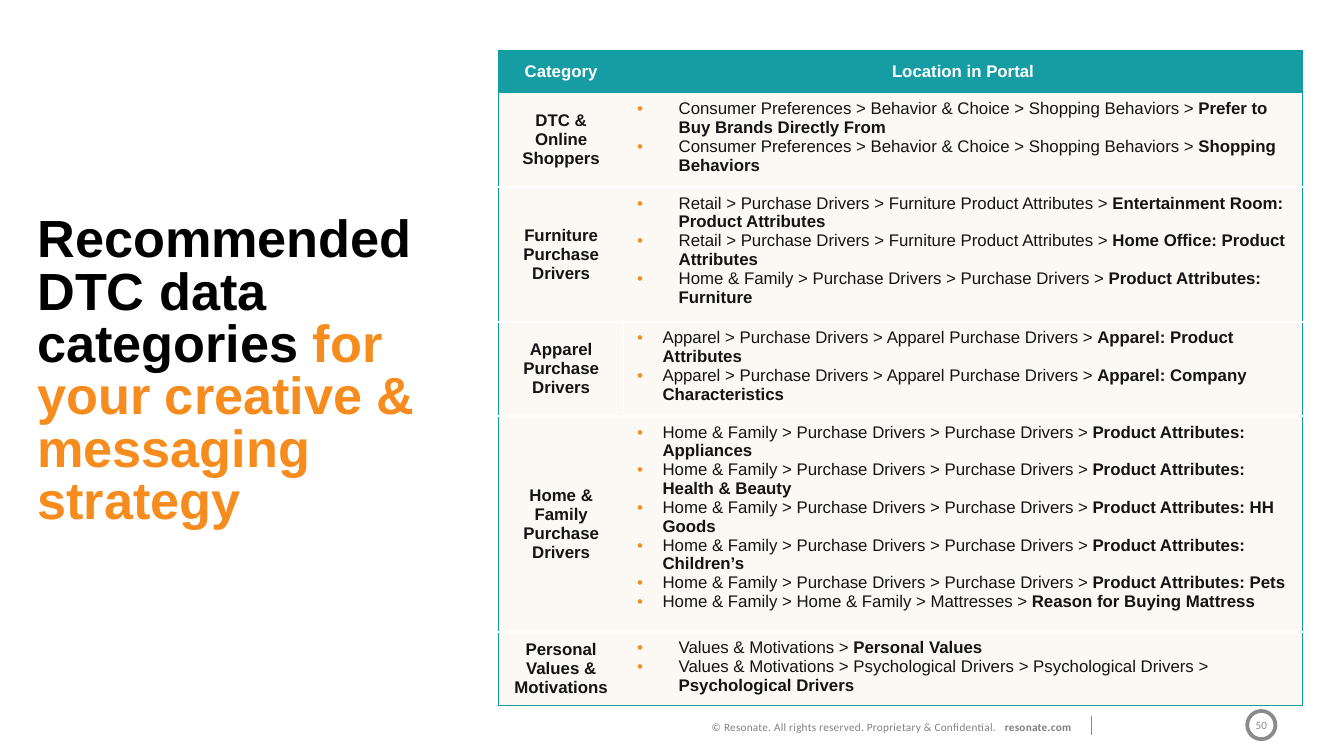
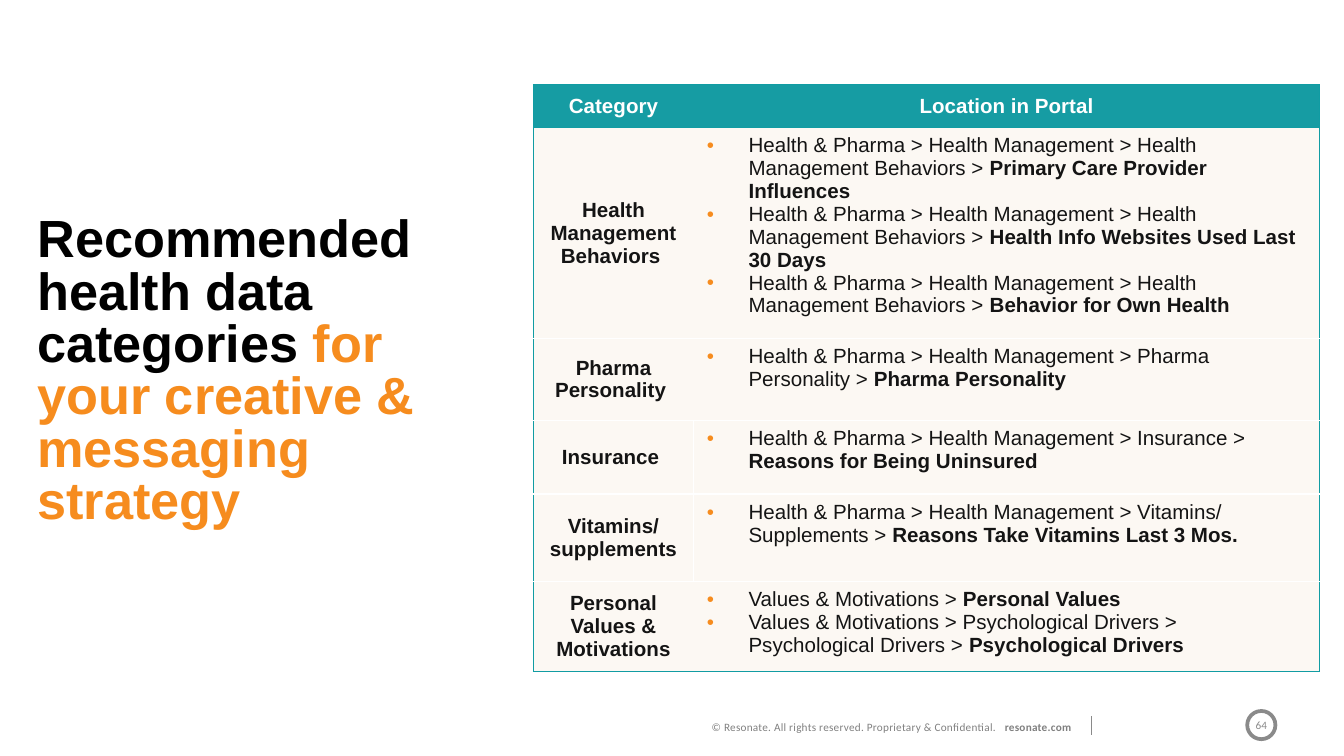
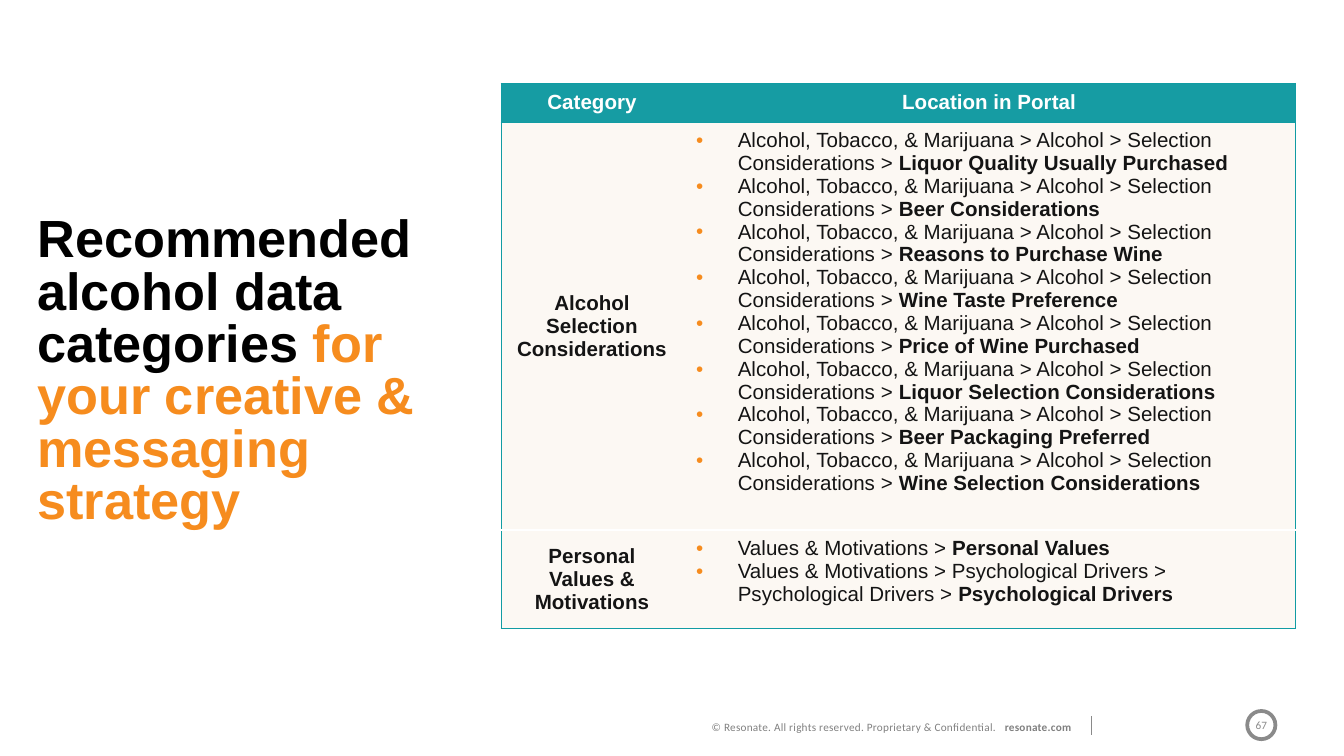
from lxml import etree
from pptx import Presentation
from pptx.dml.color import RGBColor
from pptx.enum.shapes import MSO_CONNECTOR, MSO_SHAPE
from pptx.enum.text import MSO_ANCHOR, PP_ALIGN
from pptx.oxml.ns import qn
from pptx.util import Inches, Pt

CENTER, RIGHT = PP_ALIGN.CENTER, PP_ALIGN.RIGHT
MIDDLE = MSO_ANCHOR.MIDDLE
OVAL, STRAIGHT = MSO_SHAPE.OVAL, MSO_CONNECTOR.STRAIGHT

SLIDE_WIDTH = Inches(10)
SLIDE_HEIGHT = SLIDE_WIDTH * 9 // 16

WHITE, BLACK, INK, CREAM = "FFFFFF", "000000", "141414", "FCF8F3"
TEAL, HEADER_TEAL, ORANGE, RED = "119CA3", "169CA3", "F68C1E", "F84524"
GRAY, FOOTER_GRAY = "8A8A8A", "808080"
OUTER, INNER = (TEAL, 0.75), (WHITE, 1)
NO_STYLE = "{2D5ABB26-0587-4C30-8999-92F81FD0307C}"
WIDE_INDENT, NARROW_INDENT = 0.31, 0.19

HEADINGS = ("Category", "Location in Portal")
TITLE_ENDING = [("for your ", 135), ("creative", 0), (" & ", 135),
                ("messaging", 45), (" strategy", 135)]

HOME = "Home & Family > Purchase Drivers > Purchase Drivers > "
FURNITURE = "Retail > Purchase Drivers > Furniture Product Attributes > "
APPAREL = "Apparel > Purchase Drivers > Apparel Purchase Drivers > "
SHOPPING = "Consumer Preferences > Behavior & Choice > Shopping Behaviors > "
HEALTH = "Health & Pharma > Health Management > "
ALCOHOL = "Alcohol, Tobacco, & Marijuana > Alcohol > Selection Considerations > "
VALUES = "Values & Motivations > "


def row(category, height, locations, indent=WIDE_INDENT, divided=False):
    return {"category": category, "height": height, "locations": locations,
            "indent": indent, "divided": divided}


def values_row(height):
    return row("Personal Values & Motivations", height, [
        (VALUES, ["Personal Values"]),
        (VALUES + "Psychological Drivers > Psychological Drivers > ",
         ["Psychological Drivers"])])


SLIDES = [
    {"topic": "DTC", "number": "50", "at": (3.71, 0.38), "columns": (0.93, 5.05),
     "size": 9, "header": 0.31, "rows": [
         row("DTC & Online Shoppers", 0.7, [
             (SHOPPING, ["Prefer to Buy Brands Directly From",
                         "Shopping Behaviors"])]),
         row("Furniture Purchase Drivers", 1, [
             (FURNITURE, ["Entertainment Room: Product Attributes",
                          "Home Office: Product Attributes"]),
             (HOME, ["Product Attributes: Furniture"])]),
         row("Apparel Purchase Drivers", 0.7, [
             (APPAREL, ["Apparel: Product Attributes",
                        "Apparel: Company Characteristics"])],
             NARROW_INDENT, divided=True),
         row("Home & Family Purchase Drivers", 1.6, [
             (HOME, ["Product Attributes: Appliances",
                     "Product Attributes: Health & Beauty",
                     "Product Attributes: HH Goods",
                     "Product Attributes: Children’s",
                     "Product Attributes: Pets"]),
             ("Home & Family > Home & Family > Mattresses > ",
              ["Reason for Buying Mattress"])],
             NARROW_INDENT),
         values_row(0.55)]},
    {"topic": "health", "number": "64", "at": (3.97, 0.63), "columns": (1.19, 4.66),
     "size": 11, "header": 0.32, "rows": [
         row("Health Management Behaviors ", 1.56, [
             (HEALTH + "Health Management Behaviors > ",
              ["Primary Care Provider Influences",
               "Health Info Websites Used Last 30 Days",
               "Behavior for Own Health"])]),
         row("Pharma Personality ", 0.61, [
             (HEALTH + "Pharma Personality > ", ["Pharma Personality"])]),
         row("Insurance ", 0.55, [
             (HEALTH + "Insurance > ", ["Reasons for Being Uninsured"])],
             divided=True),
         row("Vitamins/\nsupplements", 0.65, [
             (HEALTH + "Vitamins/ Supplements > ",
              ["Reasons Take Vitamins Last 3 Mos."])],
             divided=True),
         values_row(0.67)]},
    {"topic": "alcohol", "number": "67", "at": (3.73, 0.62), "columns": (1.35, 4.56),
     "size": 11, "header": 0.29, "rows": [
         row("Alcohol Selection Considerations", 3.03, [
             (ALCOHOL, ["Liquor Quality Usually Purchased",
                        "Beer Considerations",
                        "Reasons to Purchase Wine",
                        "Wine Taste Preference",
                        "Price of Wine Purchased",
                        "Liquor Selection Considerations",
                        "Beer Packaging Preferred",
                        "Wine Selection Considerations"])]),
         values_row(0.73)]},
]


def color(value):
    return RGBColor.from_string(value)


def add_run(paragraph, text, size, fill, bold=False, font="Arial", spacing=None):
    run = paragraph.add_run()
    run.text = text
    run.font.name, run.font.size, run.font.bold = font, Pt(size), bold
    run.font.color.rgb = color(fill)
    if spacing is not None:
        run.font._element.set("spc", str(round(spacing * 100)))
    return run


def add_text_box(slide, left, top, width, height):
    frame = slide.shapes.add_textbox(
        Inches(left), Inches(top), Inches(width), Inches(height)).text_frame
    frame.word_wrap = True
    return frame.paragraphs[0]


def add_title(slide, topic):
    paragraph = add_text_box(slide, 0.18, 1.56, 3.62, 2.24)
    paragraph.line_spacing = Pt(28)
    add_run(paragraph, f"Recommended {topic} data categories ", 28, BLACK, True)
    for text, angle in TITLE_ENDING:
        fill = add_run(paragraph, text, 28, ORANGE, True).font.fill
        fill.gradient()
        fill.gradient_angle = (360 - angle) % 360
        for stop, (position, value) in zip(fill.gradient_stops,
                                           [(0.74, ORANGE), (1, RED)]):
            stop.position, stop.color.rgb = position, color(value)


def add_footer(slide, number):
    paragraph = add_text_box(slide, -0.14, 5.31, 8.23, 0.2)
    paragraph.alignment = RIGHT
    for text, bold, spacing in [
            ("© Resonate. All rights reserved. Proprietary & Confidential.", False, 0.13),
            (" ", False, 3.2),
            ("resonate.com ", True, 0.13)]:
        add_run(paragraph, text, 6, FOOTER_GRAY, bold, "Calibri", spacing)

    divider = slide.shapes.add_connector(
        STRAIGHT, Inches(8.12), Inches(5.33), Inches(8.12), Inches(5.47))
    divider.line.color.rgb, divider.line.width = color(GRAY), Pt(0.75)
    etree.SubElement(divider._element.spPr, qn("a:effectLst"))

    badge = slide.shapes.add_shape(
        OVAL, Inches(9.28), Inches(5.29), Inches(0.21), Inches(0.21))
    badge.shadow.inherit = False
    badge.fill.background()
    badge.line.color.rgb, badge.line.width = color(GRAY), Pt(2)
    frame = badge.text_frame
    frame.word_wrap, frame.vertical_anchor = False, MIDDLE
    frame.margin_left = frame.margin_right = frame.margin_top = frame.margin_bottom = 0
    frame.paragraphs[0].alignment = CENTER
    add_run(frame.paragraphs[0], number, 6, GRAY, font="Calibri")


def style_cell(cell, fill, left, right, top, bottom):
    properties = cell._tc.get_or_add_tcPr()
    for side, border in zip("LRTB", (left, right, top, bottom)):
        line = etree.SubElement(properties, qn(f"a:ln{side}"))
        if border is None:
            etree.SubElement(line, qn("a:noFill"))
            continue
        line.set("w", str(Pt(border[1])))
        solid = etree.SubElement(line, qn("a:solidFill"))
        etree.SubElement(solid, qn("a:srgbClr"), val=border[0])
    cell.fill.solid()
    cell.fill.fore_color.rgb = color(fill)


def write_centered(cell, text, size, fill):
    cell.vertical_anchor = MIDDLE
    frame = cell.text_frame
    for index, line in enumerate(text.split("\n")):
        paragraph = frame.add_paragraph() if index else frame.paragraphs[0]
        paragraph.alignment = CENTER
        add_run(paragraph, line, size, fill, True)


def write_locations(cell, locations, size, indent):
    frame = cell.text_frame
    entries = [(path, name) for path, names in locations for name in names]
    for index, (path, name) in enumerate(entries):
        paragraph = frame.add_paragraph() if index else frame.paragraphs[0]
        properties = paragraph._p.get_or_add_pPr()
        properties.set("marL", str(Inches(indent)))
        properties.set("indent", str(-Inches(indent)))
        bullet_color = etree.SubElement(properties, qn("a:buClr"))
        etree.SubElement(bullet_color, qn("a:srgbClr"), val=ORANGE)
        etree.SubElement(properties, qn("a:buFont"), typeface="Arial")
        etree.SubElement(properties, qn("a:buChar"), char="•")
        add_run(paragraph, path, size, INK)
        add_run(paragraph, name, size, INK, True)


def add_location_table(slide, content):
    rows, size = content["rows"], content["size"]
    heights = [content["header"]] + [entry["height"] for entry in rows]
    left, top = content["at"]
    table = slide.shapes.add_table(
        len(heights), 2, Inches(left), Inches(top),
        Inches(sum(content["columns"])), Inches(sum(heights))).table
    table.first_row = table.horz_banding = False
    table._tbl.tblPr.find(qn("a:tableStyleId")).text = NO_STYLE
    for column, width in zip(table.columns, content["columns"]):
        column.width = Inches(width)
    for table_row, height in zip(table.rows, heights):
        table_row.height = Inches(height)

    for index, heading in enumerate(HEADINGS):
        write_centered(table.cell(0, index), heading, size, WHITE)
    for index, entry in enumerate(rows, 1):
        write_centered(table.cell(index, 0), entry["category"], size, INK)
        write_locations(table.cell(index, 1), entry["locations"], size, entry["indent"])

    for index in range(len(heights)):
        fill = CREAM if index else HEADER_TEAL
        middle = INNER if index and rows[index - 1]["divided"] else None
        above = OUTER if index <= 1 else INNER
        below = OUTER if index in (0, len(rows)) else INNER
        style_cell(table.cell(index, 0), fill, OUTER, middle, above, below)
        style_cell(table.cell(index, 1), fill, middle, OUTER, above, below)


def main():
    presentation = Presentation()
    presentation.slide_width, presentation.slide_height = SLIDE_WIDTH, SLIDE_HEIGHT
    for content in SLIDES:
        slide = presentation.slides.add_slide(presentation.slide_layouts[6])
        slide.background.fill.solid()
        slide.background.fill.fore_color.rgb = color(WHITE)
        add_footer(slide, content["number"])
        add_title(slide, content["topic"])
        add_location_table(slide, content)
    presentation.save("out.pptx")


if __name__ == "__main__":
    main()
